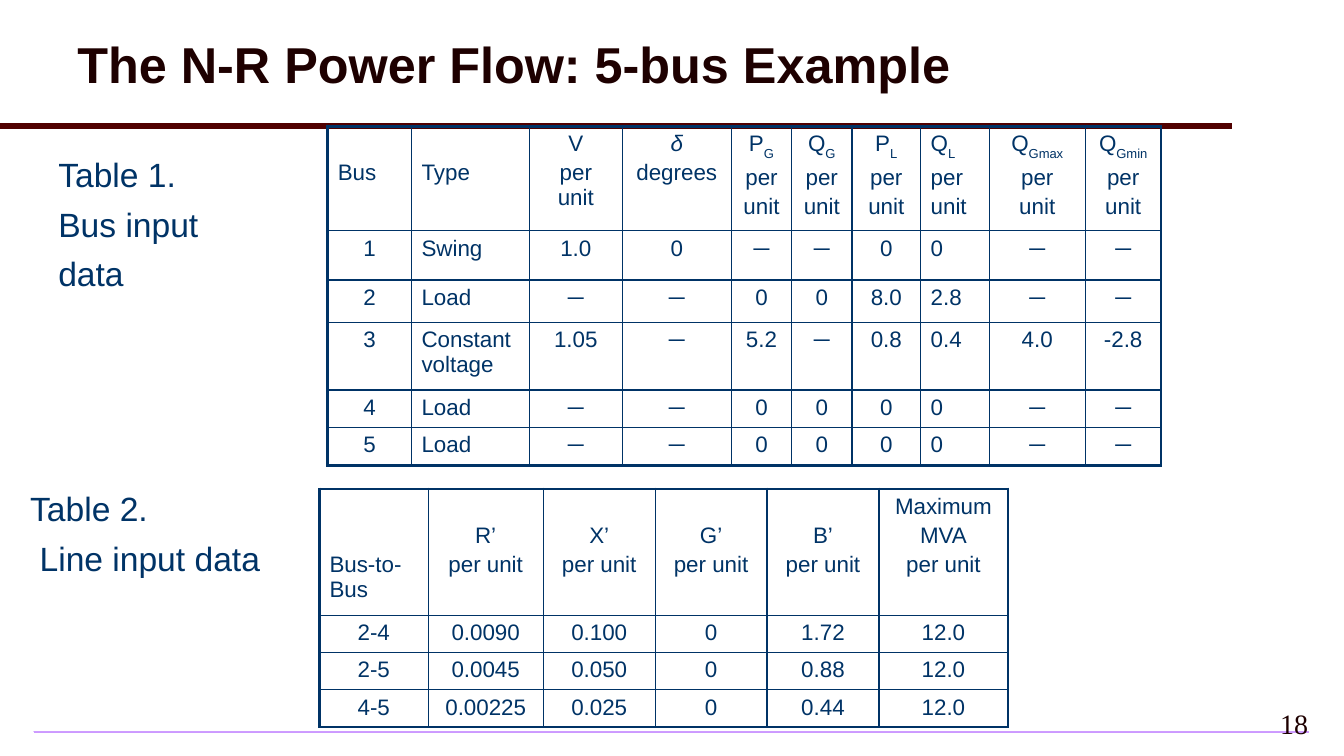
from dataclasses import dataclass

from lxml import etree
from pptx import Presentation, util as u
from pptx.dml import color
from pptx.enum import shapes, text
from pptx.oxml import ns

TITLE = "The N-R Power Flow: 5-bus Example"
PAGE_NUMBER = "18"
CAPTIONS = [
    {"lines": ["Table 1.", "Bus input", "data"], "box": (1.47, 3.81, 3.9, 3.48), "last_indent": 0},
    {"lines": ["Table 2.", "Line input data"], "box": (0.76, 12.22, 6.4, 2.26), "last_indent": 0.24},
]
BUS_TABLE = {
    "corner": (8.26, 3.18),
    "widths": [2.11, 2.97, 2.34, 2.75, 1.52, 1.52, 1.73, 1.73, 2.42, 1.91],
    "heights": [2.6, 1.24, 1.07, 1.7, 0.94, 0.97],
    "headers": [["Bus"], ["Type"], ["V", "per unit"], ["δ", "degrees"],
                ["P_G", "per", "unit"], ["Q_G", "per", "unit"],
                ["P_L", "per", "unit"], ["Q_L", "per", "unit"],
                ["Q_Gmax", "per", "unit"], ["Q_Gmin", "per", "unit"]],
    "lines_down": [1, 1, 0, 0, 0, 0, 0, 0, 0, 0],
    "header_align": "llccccclcc",
    "body_align": "clccccclcc",
    "rows": [
        ["1", "Swing", "1.0", "0", "─", "─", "0", "0", "─", "─"],
        ["2", "Load", "─", "─", "0", "0", "8.0", "2.8", "─", "─"],
        ["3", "Constant voltage", "1.05", "─", "5.2", "─", "0.8", "0.4", "4.0", "-2.8"],
        ["4", "Load", "─", "─", "0", "0", "0", "0", "─", "─"],
        ["5", "Load", "─", "─", "0", "0", "0", "0", "─", "─"],
    ],
}
LINE_TABLE = {
    "corner": (8.05, 12.32),
    "widths": [2.74, 2.9, 2.82, 2.82, 2.82, 3.25],
    "heights": [3.18, 0.94, 0.94, 0.94],
    "headers": [["Bus-to-Bus"], ["R’", "per unit"], ["X’", "per unit"],
                ["G’", "per unit"], ["B’", "per unit"], ["Maximum", "MVA", "per unit"]],
    "lines_down": [2, 1, 1, 1, 1, 0],
    "header_align": "lccccc",
    "body_align": "cccccc",
    "rows": [
        ["2-4", "0.0090", "0.100", "0", "1.72", "12.0"],
        ["2-5", "0.0045", "0.050", "0", "0.88", "12.0"],
        ["4-5", "0.00225", "0.025", "0", "0.44", "12.0"],
    ],
}


@dataclass(frozen=True)
class Theme:
    heading: str = "1E0000"
    rule: str = "500000"
    ink: str = "003366"
    footer: tuple = ("CC99FF", "F3EBFF")
    sans: str = "Arial"
    serif: str = "Times New Roman"
    title_size: int = 36
    caption_size: int = 24
    number_size: int = 20
    table_size: int = 16
    caption_gap: float = 6.5
    table_gap: float = 3.2
    outer_border: float = 2.25
    inner_border: float = 1


THEME = Theme()
ALIGN = {"l": text.PP_ALIGN.LEFT, "c": text.PP_ALIGN.CENTER, "r": text.PP_ALIGN.RIGHT}
CELL_TOP, HEADER_LINE = 0.13, 0.74


def rgb(value):
    return color.RGBColor.from_string(value)


def style(run, size, ink, face=THEME.sans, bold=False):
    run.font.size, run.font.name, run.font.bold = u.Pt(size), face, bold
    run.font.color.rgb = rgb(ink)


def add_box(slide, box, lines, size, ink, face=THEME.sans, bold=False, align="l",
            middle=True, insets=(0.25, 0.13)):
    frame = slide.shapes.add_textbox(*map(u.Cm, box)).text_frame
    frame.word_wrap = True
    frame.vertical_anchor = text.MSO_ANCHOR.MIDDLE if middle else text.MSO_ANCHOR.TOP
    frame.margin_left = frame.margin_right = u.Cm(insets[0])
    frame.margin_top = frame.margin_bottom = u.Cm(insets[1])
    frame.text = "\n".join(lines)
    for paragraph in frame.paragraphs:
        paragraph.alignment = ALIGN[align]
        style(paragraph.runs[0], size, ink, face, bold)
    return frame


def add_caption(slide, caption):
    frame = add_box(slide, caption["box"], caption["lines"], THEME.caption_size, THEME.ink,
                    middle=False, insets=(0, 0.08))
    for paragraph in frame.paragraphs[1:]:
        paragraph.space_before = u.Pt(THEME.caption_gap)
    properties = frame.paragraphs[-1]._p.get_or_add_pPr()
    properties.set("marL", str(u.Cm(caption["last_indent"])))


def fill_cell(cell, lines, align):
    cell.text_frame.text = "\n".join(line.replace("_", "") for line in lines)
    for index, (line, paragraph) in enumerate(zip(lines, cell.text_frame.paragraphs)):
        paragraph.alignment = ALIGN[align]
        if index:
            paragraph.space_before = u.Pt(THEME.table_gap)
        symbol, _, subscript = line.partition("_")
        paragraph.runs[0].text = symbol
        if subscript:
            lowered = paragraph.add_run()
            lowered.text = subscript
            lowered._r.get_or_add_rPr().set("baseline", "-30000")
        for run in paragraph.runs:
            style(run, THEME.table_size, THEME.ink)
            run.font.italic = symbol == "δ"


def set_borders(cell, outer_sides):
    properties = cell._tc.get_or_add_tcPr()
    for side, is_outer in outer_sides.items():
        width = THEME.outer_border if is_outer else THEME.inner_border
        border = etree.SubElement(properties, ns.qn("a:ln" + side), w=str(u.Pt(width)))
        solid = etree.SubElement(border, ns.qn("a:solidFill"))
        etree.SubElement(solid, ns.qn("a:srgbClr"), val=THEME.ink)


def add_data_table(slide, data):
    widths, heights = data["widths"], data["heights"]
    size = (sum(widths), sum(heights))
    table = slide.shapes.add_table(len(heights), len(widths),
                                   *map(u.Cm, data["corner"] + size)).table
    table.first_row = table.horz_banding = False
    for column, width in zip(table.columns, widths):
        column.width = u.Cm(width)
    for row, height in zip(table.rows, heights):
        row.height = u.Cm(height)
    contents = [data["headers"]] + [[[value] for value in row] for row in data["rows"]]
    for r, row in enumerate(contents):
        for c, lines in enumerate(row):
            cell = table.cell(r, c)
            align = data["body_align" if r else "header_align"][c]
            fill_cell(cell, lines, align)
            lines_down = 0 if r else data["lines_down"][c]
            cell.margin_top = u.Cm(CELL_TOP + lines_down * HEADER_LINE)
            set_borders(cell, {"L": c == 0, "R": c == len(widths) - 1,
                               "T": r == 0, "B": r == len(heights) - 1})
            cell.fill.background()


def add_footer_rule(slide):
    rule = slide.shapes.add_shape(shapes.MSO_SHAPE.RECTANGLE,
                                  *map(u.Cm, (0.84, 18.42, 32.16, 0.03)))
    rule.shadow.inherit = False
    rule.line.fill.background()
    rule.fill.gradient()
    for stop, value in zip(rule.fill.gradient_stops, THEME.footer):
        stop.color.rgb = rgb(value)
    linear = rule._element.spPr.find(".//" + ns.qn("a:lin"))
    radial = etree.Element(ns.qn("a:path"), {"path": "shape"})
    etree.SubElement(radial, ns.qn("a:fillToRect"), dict.fromkeys("ltrb", "50000"))
    linear.getparent().replace(linear, radial)


def add_title_rule(slide):
    rule = slide.shapes.add_connector(shapes.MSO_CONNECTOR.STRAIGHT,
                                      *map(u.Cm, (0, 3.18, 31.04, 3.18)))
    rule.line.color.rgb = rgb(THEME.rule)
    rule.line.width = u.Pt(4)
    etree.SubElement(rule._element.spPr, ns.qn("a:effectLst"))


def main():
    presentation = Presentation()
    presentation.slide_width, presentation.slide_height = u.Cm(33.87), u.Cm(19.05)
    slide = presentation.slides.add_slide(presentation.slide_layouts[6])
    add_footer_rule(slide)
    add_title_rule(slide)
    title = add_box(slide, (1.7, 0.2, 31.04, 2.97), [TITLE], THEME.title_size,
                    THEME.heading, bold=True)
    title.paragraphs[0].line_spacing = 0.9
    for caption in CAPTIONS:
        add_caption(slide, caption)
    for data in (BUS_TABLE, LINE_TABLE):
        add_data_table(slide, data)
    add_box(slide, (27.94, 17.58, 5.28, 1.27), [PAGE_NUMBER], THEME.number_size,
            THEME.heading, THEME.serif, align="r")
    presentation.save("out.pptx")


if __name__ == "__main__":
    main()
